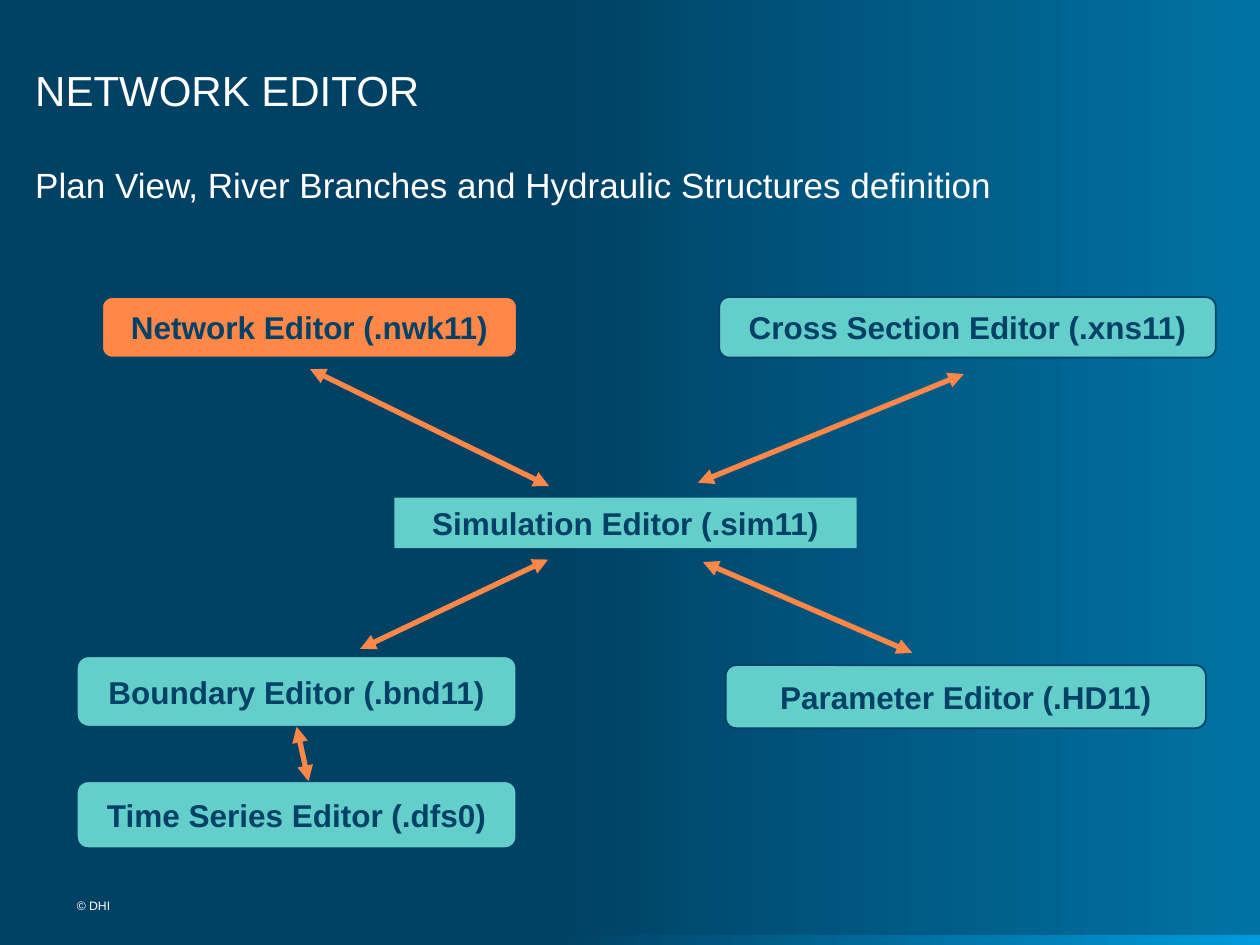
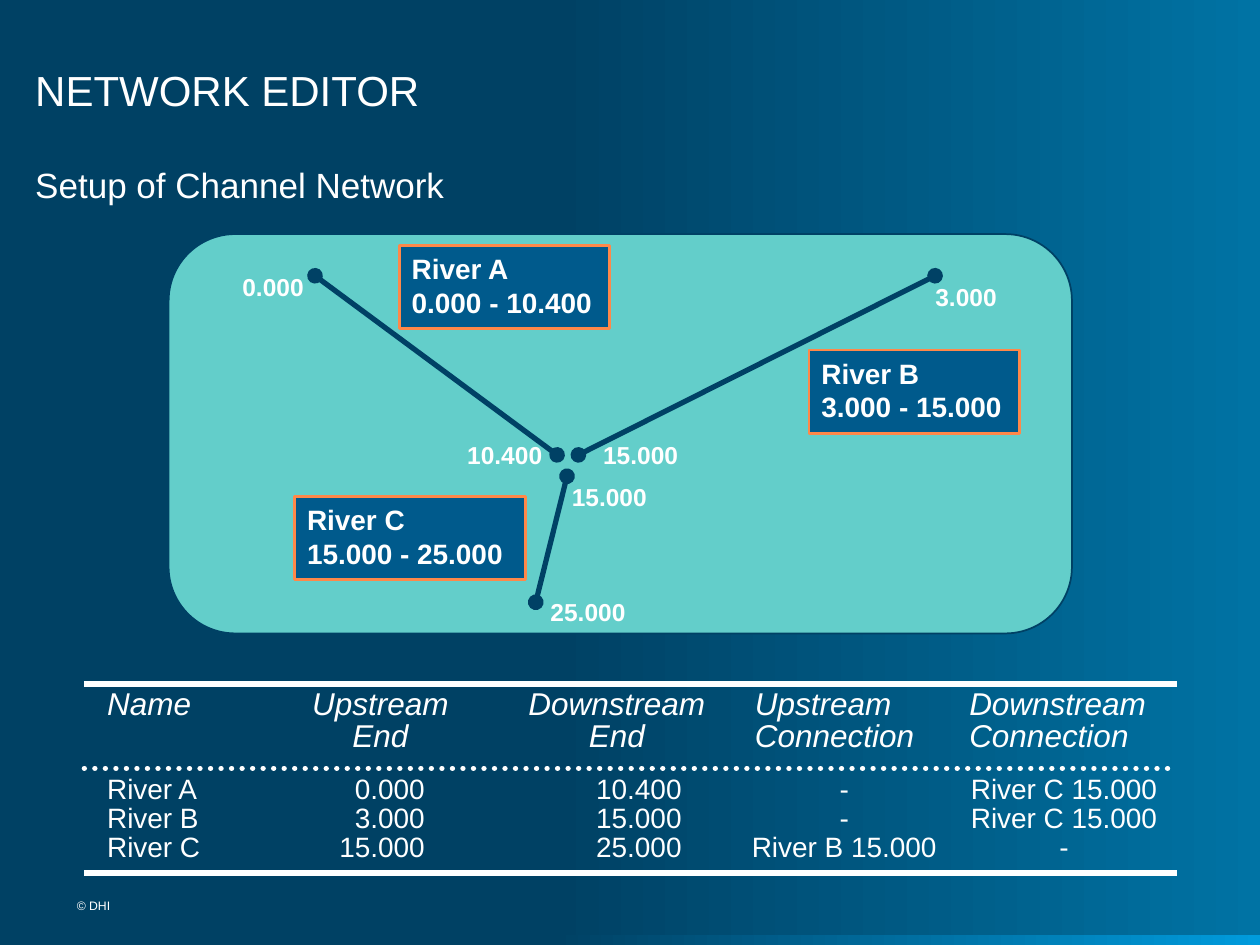
"""Build two slides on the network editor: its file links and a channel network."""
from lxml import etree
from pptx import Presentation
from pptx.dml.color import RGBColor
from pptx.enum.dml import MSO_LINE
from pptx.enum.shapes import MSO_CONNECTOR, MSO_SHAPE
from pptx.enum.text import MSO_ANCHOR, PP_ALIGN
from pptx.oxml.ns import qn
from pptx.util import Cm, Pt

LEFT, CENTER, RIGHT = PP_ALIGN.LEFT, PP_ALIGN.CENTER, PP_ALIGN.RIGHT
TOP, MIDDLE, BOTTOM = MSO_ANCHOR.TOP, MSO_ANCHOR.MIDDLE, MSO_ANCHOR.BOTTOM
RECT, ROUND_RECT = MSO_SHAPE.RECTANGLE, MSO_SHAPE.ROUNDED_RECTANGLE
STRAIGHT, DOTTED = MSO_CONNECTOR.STRAIGHT, MSO_LINE.ROUND_DOT
NO_STYLE = "{2D5ABB26-0587-4C30-8999-92F81FD0307C}"
MARGINS = ("margin_left", "margin_top", "margin_right", "margin_bottom")

THEME = {
    "font": "Arial",
    "white": RGBColor.from_string("FFFFFF"),
    "navy": RGBColor.from_string("004165"),
    "deep": RGBColor.from_string("004164"),
    "sea": RGBColor.from_string("0073A4"),
    "sky": RGBColor.from_string("009BDC"),
    "label": RGBColor.from_string("005A8C"),
    "teal": RGBColor.from_string("63CECA"),
    "orange": RGBColor.from_string("FF8849"),
    "title": Pt(24), "body": Pt(20), "box": Pt(18), "head": Pt(18),
    "cell": Pt(16), "river": Pt(16), "chainage": Pt(14), "footer": Pt(7),
}


def write(tf, text, size, color="white", align=LEFT, anchor=TOP, margins=None,
          spacing=None, **font):
    """Fill a text frame, one paragraph per line of text."""
    tf.word_wrap = True
    tf.vertical_anchor = anchor
    for name, value in zip(MARGINS, margins or ()):
        setattr(tf, name, Cm(value))
    for i, line in enumerate(text.split("\n")):
        p = tf.paragraphs[0] if i == 0 else tf.add_paragraph()
        p.alignment, p.space_before, p.line_spacing = align, Pt(0), spacing
        r = p.add_run()
        r.text = line
        r.font.color.rgb = THEME[color]
        for name, value in {"name": THEME["font"], "size": THEME[size], **font}.items():
            setattr(r.font, name, value)


def connect(s, ends, color, tip=None, dash=None):
    """Draw a straight line with the same tip at both ends."""
    c = s.shapes.add_connector(STRAIGHT, *[Cm(v) for v in ends])
    c.line.color.rgb = THEME[color]
    c.line.width = Pt(3)
    ln = c.line._get_or_add_ln()
    if dash:
        c.line.dash_style = dash
        ln.set("cap", "rnd")
    if tip:
        for tag in ("a:headEnd", "a:tailEnd"):
            etree.SubElement(ln, qn(tag)).set("type", tip)
    etree.SubElement(c._element.spPr, qn("a:effectLst"))
    return c


prs = Presentation()
prs.slide_width, prs.slide_height = Cm(25.4), Cm(19.05)
backdrop = prs.slide_master.background.fill

subtitles = ["Plan View, River Branches and Hydraulic Structures definition",
             "Setup of Channel Network"]
for subtitle in subtitles:
    s = prs.slides.add_slide(prs.slide_layouts[1])
    band = s.shapes.add_shape(RECT, 0, Cm(18.85), prs.slide_width, Cm(0.2))
    band.shadow.inherit = False
    band.line.fill.background()
    for fill, end in ((backdrop, "sea"), (band.fill, "sky")):
        fill.gradient()
        fill.gradient_angle = 0
        for stop, position, color in zip(fill.gradient_stops, (0.44, 1), ("deep", end)):
            stop.position = position
            stop.color.rgb = THEME[color]

    title, body = s.placeholders
    footer = s.shapes.add_textbox(0, 0, 0, 0)
    for sp, text, size, anchor, place in (
            (title, "NETWORK EDITOR", "title", BOTTOM, (0.71, 0.64, 21.84, 1.68)),
            (body, subtitle, "body", TOP, (0.71, 3.3, 24, 14.22)),
            (footer, "© DHI", "footer", TOP, (1.55, 18.11, 3.94, 0.48))):
        sp.left, sp.top, sp.width, sp.height = [Cm(v) for v in place]
        write(sp.text_frame, text, size, anchor=anchor, margins=(0, 0, 0, 0))
    pPr = body.text_frame.paragraphs[0]._p.get_or_add_pPr()
    pPr.set("marL", "0")
    pPr.set("indent", "0")
    etree.SubElement(pPr, qn("a:buNone"))

s = prs.slides[0]
editors = [
    ("Network Editor (.nwk11)", ROUND_RECT, "orange", (2.06, 5.99, 8.36, 1.22)),
    ("Cross Section Editor (.xns11)", ROUND_RECT, "teal", (14.5, 5.99, 10.01, 1.22)),
    ("Simulation Editor (.sim11)", RECT, "teal", (7.95, 10.03, 9.32, 1.02)),
    ("Parameter Editor (.HD11)", ROUND_RECT, "teal", (14.63, 13.41, 9.68, 1.27)),
    ("Time Series Editor (.dfs0)", ROUND_RECT, "teal", (1.55, 15.75, 8.86, 1.35)),
    ("Boundary Editor (.bnd11)", ROUND_RECT, "teal", (1.55, 13.23, 8.86, 1.42)),
]
for text, kind, color, place in editors:
    sp = s.shapes.add_shape(kind, *[Cm(v) for v in place])
    sp.shadow.inherit = False
    sp.fill.solid()
    sp.fill.fore_color.rgb = THEME[color]
    if kind == RECT:
        sp.line.fill.background()
    else:
        sp.line.color.rgb = THEME["navy"]
        sp.line.width = Pt(1)
    write(sp.text_frame, text, "box", "navy", CENTER, MIDDLE, bold=True)
boundary = sp

for ends in ((11.07, 9.8, 6.25, 7.44), (14.07, 9.73, 19.43, 7.54),
             (7.26, 13.08, 11.05, 11.28), (18.39, 13.16, 14.17, 11.33),
             (6.22, 15.75, 5.98, 14.65)):
    c = connect(s, ends, "orange", "triangle")
c.end_connect(boundary, 2)

s = prs.slides[1]
panel = s.shapes.add_shape(ROUND_RECT, Cm(3.4), Cm(4.72), Cm(18.21), Cm(8.05))
panel.shadow.inherit = False
panel.fill.solid()
panel.fill.fore_color.rgb = THEME["teal"]
panel.line.color.rgb = THEME["navy"]
panel.line.width = Pt(1)

rivers = [
    {"row": ("River A", "0.000", "10.400", "-", "River C 15.000"),
     "course": (6.35, 5.56, 11.23, 9.17), "box": (8.05, 4.95, 4.24),
     "labels": ((4.45, 5.36), (9.12, 8.74))},
    {"row": ("River B", "3.000", "15.000", "-", "River C 15.000"),
     "course": (18.85, 5.56, 11.66, 9.17), "box": (16.31, 7.06, 4.24),
     "labels": ((18.42, 5.56), (11.86, 8.74))},
    {"row": ("River C", "15.000", "25.000", "River B 15.000", "-"),
     "course": (11.43, 9.6, 10.8, 12.14), "box": (5.94, 10.01, 4.65),
     "labels": ((11.23, 9.6), (10.8, 11.91))},
]
for river in rivers:
    connect(s, river["course"], "navy", "oval")
for river in rivers:
    name, upstream, downstream = river["row"][:3]
    for text, (x, y) in zip((upstream, downstream), river["labels"]):
        tb = s.shapes.add_textbox(Cm(x), Cm(y), Cm(2.11), Cm(0.84))
        write(tb.text_frame, text, "chainage", align=CENTER, bold=True)
    x, y, width = river["box"]
    sp = s.shapes.add_shape(RECT, Cm(x), Cm(y), Cm(width), Cm(1.68))
    sp.shadow.inherit = False
    sp.fill.solid()
    sp.fill.fore_color.rgb = THEME["label"]
    sp.line.color.rgb = THEME["orange"]
    sp.line.width = Pt(1.5)
    write(sp.text_frame, f"{name}\n{upstream} - {downstream}", "river", bold=True)

columns = [
    ("Name", 3.63, LEFT, LEFT, 0.46, 0),
    ("Upstream\nEnd", 4.68, CENTER, RIGHT, 0, 1.45),
    ("Downstream\nEnd", 4.85, CENTER, RIGHT, 0, 1.12),
    ("Upstream\nConnection", 4.32, LEFT, CENTER, 0.36, 0),
    ("Downstream\nConnection", 4.54, LEFT, CENTER, 0.36, 0),
]
heights, anchors = (1.7, 0.74, 0.61, 0.76), (TOP, BOTTOM, MIDDLE, TOP)
left, top = 1.7, 13.79
right = left + sum(column[1] for column in columns)
frame = s.shapes.add_table(len(heights), len(columns), Cm(left), Cm(top),
                           Cm(right - left), Cm(sum(heights)))
table = frame.table
table.first_row = table.horz_banding = False
table._tbl.tblPr.find(qn("a:tableStyleId")).text = NO_STYLE
for row, height in zip(table.rows, heights):
    row.height = Cm(height)
for j, (head, width, head_align, align, head_margin, value_margin) in enumerate(columns):
    table.columns[j].width = Cm(width)
    for i, text in enumerate([head] + [river["row"][j] for river in rivers]):
        cell = table.cell(i, j)
        cell.fill.background()
        indent = head_margin if i == 0 or align == LEFT else 0
        margins = (indent, 0 if i else 0.13, value_margin if i else 0, 0)
        for name, value in zip(MARGINS, margins):
            setattr(cell, name, Cm(value))
        cell.vertical_anchor = anchors[i]
        write(cell.text_frame, text, "cell" if i else "head",
              align=align if i else head_align, anchor=None, spacing=0.9, italic=i == 0)

for y, dash in ((top, None), (top + heights[0], DOTTED), (top + sum(heights), None)):
    connect(s, (left, y, right, y), "white", dash=dash)

prs.save("out.pptx")
